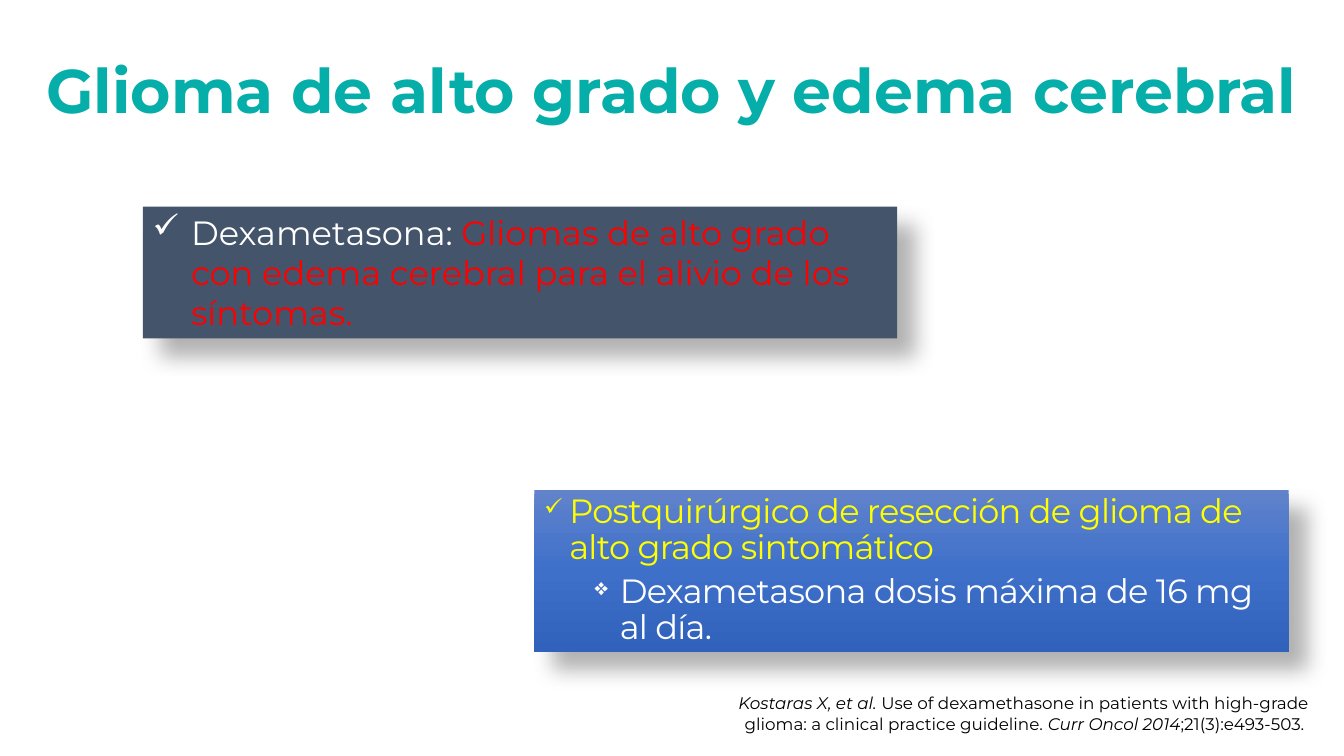
from lxml import etree
from pptx import Presentation, util as u
from pptx.dml.color import RGBColor
from pptx.enum import shapes, text
from pptx.oxml import ns

COLORS = {
    "teal": "06AEAA", "slate": "44546A", "red": "FF0000", "yellow": "FFFF00",
    "white": "FFFFFF", "black": "000000",
    "blue_top": "6183CB", "blue_mid": "3E70CA", "blue_low": "3062BB",
}


def add_xml(parent, tag, **attributes):
    element = etree.SubElement(parent, ns.qn("a:" + tag))
    for name, value in attributes.items():
        element.set(name, str(value))
    return element


def add_span(para, wording, color="black", size=24, bold=False, italic=False, tracking=None):
    span = para.add_run()
    span.text = wording
    font = span.font
    font.name, font.size, font.bold, font.italic = "Montserrat", u.Pt(size), bold, italic
    font.color.rgb = RGBColor.from_string(COLORS[color])
    if tracking is not None:
        span._r.get_or_add_rPr().set("spc", str(round(tracking * 100)))


class Slide:
    """Style and current page; lengths are columns and rows of a 160 x 90 grid."""

    def __init__(self, deck):
        self.column = deck.slide_width / 160
        self.row = deck.slide_height / 90
        self.page = deck.slides.add_slide(deck.slide_layouts[6])

    def place(self, left, top, width, height):
        return [round(n * unit) for n, unit in
                zip((left, top, width, height), (self.column, self.row) * 2)]

    def textbox(self, *area, anchor=text.MSO_ANCHOR.TOP):
        box = self.page.shapes.add_textbox(*self.place(*area))
        box.text_frame.word_wrap = True
        box.text_frame.vertical_anchor = anchor
        return box

    def panel(self, *area, fills):
        """Rectangle with a soft shadow; several fills make a vertical gradient."""
        box = self.page.shapes.add_shape(shapes.MSO_SHAPE.RECTANGLE, *self.place(*area))
        if len(fills) == 1:
            box.fill.solid()
            box.fill.fore_color.rgb = RGBColor.from_string(COLORS[fills[0]])
        else:
            box.fill.gradient()
            gradient = box._element.spPr.find(ns.qn("a:gradFill"))
            for child in list(gradient):
                gradient.remove(child)
            stops = add_xml(gradient, "gsLst")
            for index, fill in enumerate(fills):
                stop = add_xml(stops, "gs", pos=index * 100000 // (len(fills) - 1))
                add_xml(stop, "srgbClr", val=COLORS[fill])
            add_xml(gradient, "lin", ang=90 * 60000, scaled=0)
        box.line.fill.background()
        box.shadow.inherit = False
        effects = box._element.spPr.find(ns.qn("a:effectLst"))
        shadow = add_xml(effects, "outerShdw", blurRad=u.Pt(15), dist=u.Pt(18),
                         dir=45 * 60000, algn="tl", rotWithShape=0)
        add_xml(add_xml(shadow, "srgbClr", val=COLORS["black"]), "alpha", val=30000)
        box.text_frame.word_wrap = True
        box.text_frame.vertical_anchor = text.MSO_ANCHOR.TOP
        return box

    def paragraph(self, box, *spans, first=True, align=text.PP_ALIGN.LEFT, spacing=1.0,
                  before=0, level=0, bullet=None, bullet_color="white", bullet_size=100,
                  indent=0, hanging=0):
        """Write (wording, format) spans as one paragraph of the box."""
        frame = box.text_frame
        para = frame.paragraphs[0] if first else frame.add_paragraph()
        para.alignment, para.level = align, level
        para.line_spacing, para.space_before = spacing, u.Pt(before)
        if bullet:
            properties = para._p.get_or_add_pPr()
            properties.set("marL", str(u.Inches(indent)))
            properties.set("indent", str(u.Inches(-hanging)))
            add_xml(add_xml(properties, "buClr"), "srgbClr", val=COLORS[bullet_color])
            add_xml(properties, "buSzPct", val=bullet_size * 1000)
            add_xml(properties, "buChar", char=bullet)
        for wording, style in spans:
            add_span(para, wording, **style)


def main():
    deck = Presentation()
    deck.slide_width, deck.slide_height = u.Inches(13.33), u.Inches(7.5)
    slide = Slide(deck)

    surgery = slide.panel(63.6, 58.3, 89.8, 19.3, fills=("blue_top", "blue_mid", "blue_low"))
    slide.paragraph(
        surgery,
        ("Postquirúrgico de resección de glioma de alto grado sintomático",
         dict(color="yellow", tracking=-0.5)),
        spacing=0.9, bullet="✓", bullet_color="yellow", bullet_size=70,
        indent=0.25, hanging=0.25)
    slide.paragraph(
        surgery,
        ("Dexametasona dosis máxima de 16 mg al día.", dict(color="white", tracking=-0.5)),
        first=False, spacing=0.9, before=5, level=1, bullet="❖", bullet_size=70,
        indent=0.75, hanging=0.25)

    citation = slide.textbox(85.1, 81.7, 71.9, 6.2)
    slide.paragraph(
        citation,
        ("Kostaras X, et al. ", dict(size=12, italic=True)),
        ("Use of dexamethasone in patients with high-grade glioma: "
         "a clinical practice guideline. ", dict(size=12)),
        ("Curr Oncol 2014", dict(size=12, italic=True)),
        (";21(3):e493-503. ", dict(size=12)),
        align=text.PP_ALIGN.RIGHT, spacing=1.07)

    indication = slide.panel(17, 24.6, 89.8, 15.7, fills=("slate",))
    slide.paragraph(
        indication,
        ("Dexametasona: ", dict(color="white")),
        ("Gliomas de alto grado con edema cerebral para el alivio de los síntomas.",
         dict(color="red")),
        bullet="✓", indent=0.38, hanging=0.38)

    title = slide.textbox(0, 3.6, 160, 15, anchor=text.MSO_ANCHOR.MIDDLE)
    slide.paragraph(
        title,
        ("Glioma de alto grado y edema cerebral", dict(color="teal", size=44, bold=True)),
        align=text.PP_ALIGN.CENTER, spacing=0.9)

    deck.save("out.pptx")


if __name__ == "__main__":
    main()
